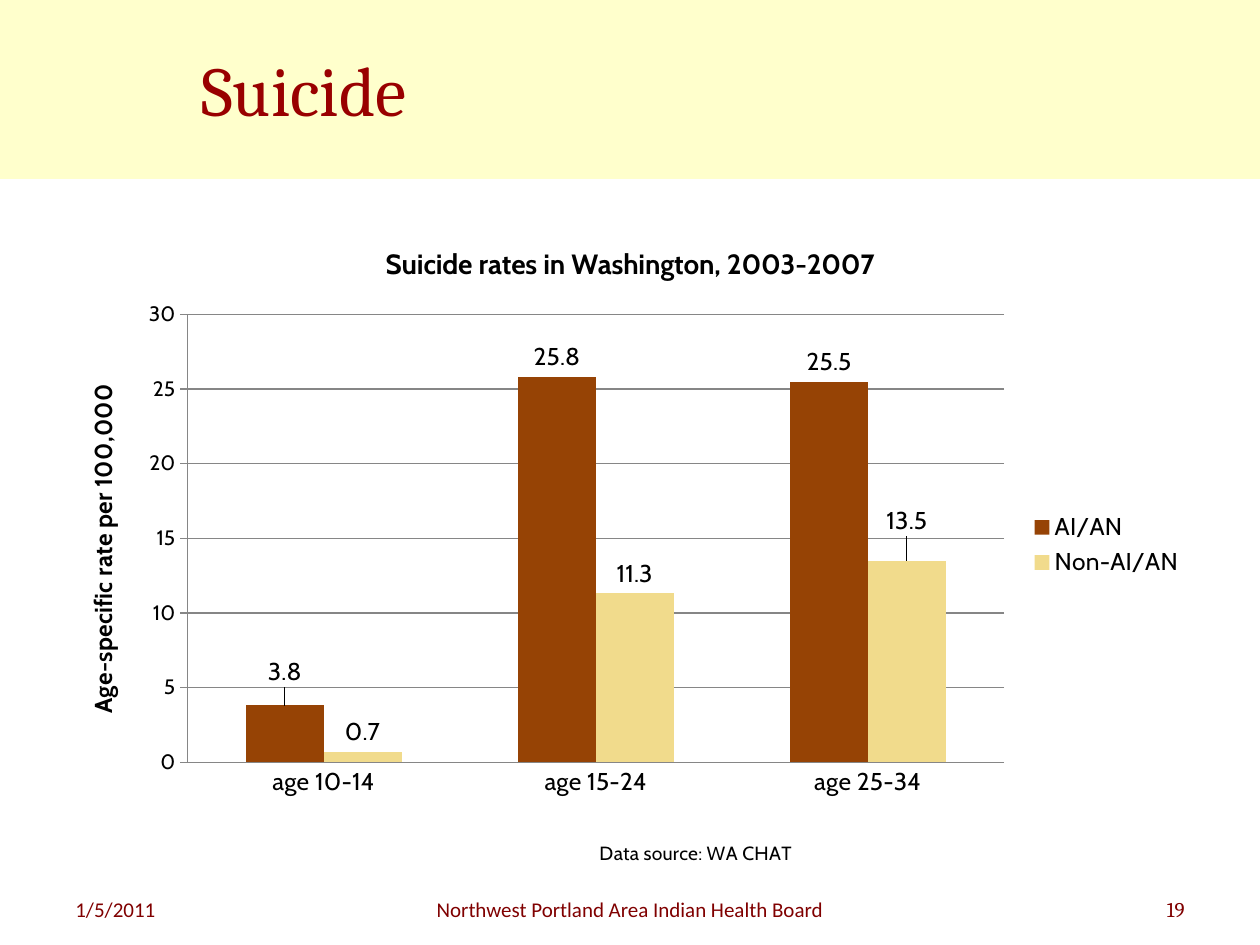
import pptx
import pptx.chart.data
import pptx.dml.color
import pptx.enum.chart
import pptx.enum.shapes
import pptx.enum.text
import pptx.oxml
import pptx.oxml.ns
import pptx.util
from pptx.util import Inches

ALIGN = pptx.enum.text.PP_ALIGN
ANCHOR = pptx.enum.text.MSO_ANCHOR
CHART = pptx.enum.chart
GRID_GRAY = "868686"
FOOTER_RED = "800000"


def color(hex_text):
    return pptx.dml.color.RGBColor.from_string(hex_text)


def style_font(font, size, hex_text="000000", name="Cabin", bold=False):
    font.size = pptx.util.Pt(size)
    font.name = name
    font.bold = bold
    font.color.rgb = color(hex_text)


def add_text(page, box, text, size, hex_text, name, align=ALIGN.LEFT, anchor=ANCHOR.TOP):
    frame = page.shapes.add_textbox(*map(Inches, box)).text_frame
    frame.word_wrap = True
    frame.vertical_anchor = anchor
    para = frame.paragraphs[0]
    para.alignment = align
    span = para.add_run()
    span.text = text
    style_font(span.font, size, hex_text, name)


def add_header(page, box):
    left, top, width, height = box
    band = page.shapes.add_shape(pptx.enum.shapes.MSO_SHAPE.RECTANGLE, *map(Inches, box))
    band.shadow.inherit = False
    band.fill.solid()
    band.fill.fore_color.rgb = color("FFFFCC")
    band.line.fill.background()
    add_text(page, (left + 1.5, top + 0.08, width - 2, height - 0.17), "Suicide",
             40, "990000", "Cambria", anchor=ANCHOR.MIDDLE)


def add_footer(page, box):
    left, top, width, height = box
    side, middle = 2.33, 4.17
    add_text(page, (left, top, side, height), "1/5/2011", 12, FOOTER_RED, "Calibri")
    add_text(page, (left + (width - middle) / 2, top, middle, height),
             "Northwest Portland Area Indian Health Board", 12, FOOTER_RED, "Calibri", ALIGN.CENTER)
    add_text(page, (left + width - side, top, side, height), "19",
             12, FOOTER_RED, "Cambria", ALIGN.RIGHT)


def set_layout(parent, position, settings):
    """Give a chart part a manual layout, as fractions of the chart, at a child position."""
    for old in parent.findall(pptx.oxml.ns.qn("c:layout")):
        parent.remove(old)
    entries = "".join(f'<c:{key} val="{value}"/>' for key, value in settings.items())
    parent.insert(position, pptx.oxml.parse_xml(
        f'<c:layout {pptx.oxml.ns.nsdecls("c")}><c:manualLayout>{entries}'
        "</c:manualLayout></c:layout>"))


def set_title(title, text, size, bold=True):
    span = title.text_frame.paragraphs[0].add_run()
    span.text = text
    style_font(span.font, size, bold=bold)


def style_axis(axis, title, title_size, label_size, tick, bold):
    axis.has_title = True
    set_title(axis.axis_title, title, title_size, bold)
    axis.major_tick_mark = tick
    axis.minor_tick_mark = CHART.XL_TICK_MARK.NONE
    style_font(axis.tick_labels.font, label_size)
    axis.format.line.color.rgb = color(GRID_GRAY)


def style_series(series, fill, raised_point, raise_by):
    series.smooth = False if hasattr(series, "smooth") else None
    series.format.fill.solid()
    series.format.fill.fore_color.rgb = color(fill)
    series.invert_if_negative = False
    labels = series.data_labels
    labels.show_value = True
    labels.position = CHART.XL_LABEL_POSITION.OUTSIDE_END
    style_font(labels.font, 14)
    label = series.points[raised_point].data_label
    style_font(label.font, 14)
    label.position = CHART.XL_LABEL_POSITION.OUTSIDE_END
    set_layout(labels._element.find(pptx.oxml.ns.qn("c:dLbl")), 1, {"x": 0, "y": -raise_by})


def add_rate_chart(page, box):
    rates = pptx.chart.data.CategoryChartData(number_format="0.0")
    rates.categories = ["age 10-14", "age 15-24", "age 25-34"]
    rates.add_series("AI/AN", (3.8, 25.8, 25.5))
    rates.add_series("Non-AI/AN", (0.7, 11.3, 13.5))
    chart = page.shapes.add_chart(CHART.XL_CHART_TYPE.COLUMN_CLUSTERED,
                                  *map(Inches, box), rates).chart
    style_font(chart.font, 10)
    chart.has_title = True
    set_title(chart.chart_title, "Suicide rates in Washington, 2003-2007", 16)

    style_axis(chart.category_axis, "Data source: WA CHAT", 11, 14,
               CHART.XL_TICK_MARK.NONE, False)
    rate_axis = chart.value_axis
    style_axis(rate_axis, "Age-specific rate per 100,000", 14, 12,
               CHART.XL_TICK_MARK.OUTSIDE, True)
    rate_axis.minimum_scale, rate_axis.maximum_scale, rate_axis.major_unit = 0, 30, 5
    rate_axis.tick_labels.number_format = "0"
    rate_axis.tick_labels.number_format_is_linked = False
    rate_axis.has_major_gridlines = True
    rate_axis.major_gridlines.format.line.color.rgb = color(GRID_GRAY)

    chart.has_legend = True
    chart.legend.position = CHART.XL_LEGEND_POSITION.RIGHT
    chart.legend.include_in_layout = False
    style_font(chart.legend.font, 14)

    plot = chart.plots[0]
    plot.vary_by_categories = False
    plot.gap_width = 150
    plot.overlap = 0
    style_series(plot.series[0], "964305", 0, 0.02)
    style_series(plot.series[1], "F1DB8C", 2, 0.03)

    set_layout(chart.element.xpath("c:chart/c:plotArea")[0], 0, {
        "layoutTarget": "inner", "xMode": "edge", "yMode": "edge",
        "x": 0.11, "y": 0.145, "w": 0.72, "h": 0.69})
    set_layout(chart.element.xpath(".//c:catAx/c:title")[0], 1, {
        "xMode": "edge", "yMode": "edge", "x": 0.47, "y": 0.95})


def main():
    deck = pptx.Presentation()
    deck.slide_width, deck.slide_height = Inches(10), Inches(7.5)
    page = deck.slides.add_slide(deck.slide_layouts[6])
    add_header(page, (0, 0, 10, 1.42))
    add_footer(page, (0.5, 7.07, 9, 0.43))
    add_rate_chart(page, (0.5, 1.75, 9, 5.17))
    deck.save("out.pptx")


if __name__ == "__main__":
    main()
